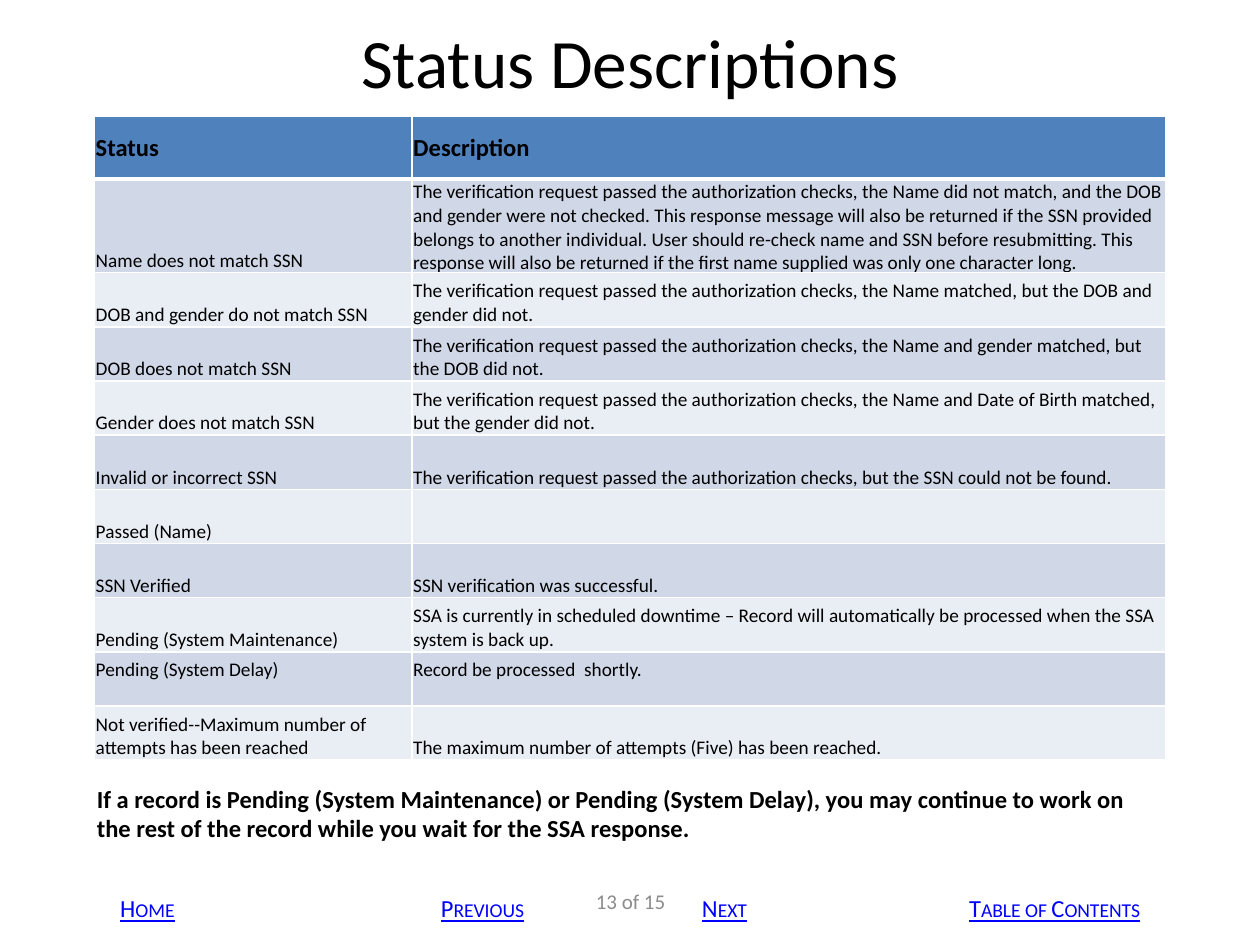
from dataclasses import dataclass

from lxml import etree
from pptx import Presentation
from pptx.dml.color import RGBColor
from pptx.enum import shapes, text
from pptx.oxml.ns import qn
from pptx.util import Inches, Pt


@dataclass(frozen=True)
class Theme:
    """Colours, font and type sizes of the slide."""
    font: str = "Calibri"
    ink: str = "000000"
    paper: str = "FFFFFF"
    header: str = "4F81BD"
    bands: tuple = ("D0D8E8", "E9EDF4")
    link: str = "0000FF"
    muted: str = "8C8C8C"
    title: float = 39.6
    strong: float = 14
    body: float = 11
    number: float = 12


THEME = Theme()
MIDDLE, BOTTOM, TOP = (text.MSO_ANCHOR.MIDDLE, text.MSO_ANCHOR.BOTTOM,
                       text.MSO_ANCHOR.TOP)
CENTER = text.PP_ALIGN.CENTER
PASSED = "The verification request passed the authorization checks, "
DELAY = "Pending (System Delay)"
ROWS = [
    ("Status", "Description"),
    ("Name does not match SSN",
     PASSED + "the Name did not match, and the DOB and gender were not checked. "
     "This response message will also be returned if the SSN provided belongs to "
     "another individual. User should re-check name and SSN before resubmitting. "
     "This response will also be returned if the first name supplied was only one "
     "character long."),
    ("DOB and gender do not match SSN",
     PASSED + "the Name matched, but the DOB and gender did not."),
    ("DOB does not match SSN",
     PASSED + "the Name and gender matched, but the DOB did not."),
    ("Gender does not match SSN",
     PASSED + "the Name and Date of Birth matched, but the gender did not."),
    ("Invalid or incorrect SSN", PASSED + "but the SSN could not be found."),
    ("Passed (Name)", ""),
    ("SSN Verified", "SSN verification was successful."),
    ("Pending (System Maintenance)",
     "SSA is currently in scheduled downtime – Record will automatically be "
     "processed when the SSA system is back up."),
    (DELAY, "Record be processed  shortly."),
    ("Not verified--Maximum number of attempts has been reached",
     "The maximum number of attempts (Five) has been reached."),
]
NOTE = ("If a record is Pending (System Maintenance) or Pending (System Delay), "
        "you may continue to work on the rest of the record while you wait for "
        "the SSA response.")
BUTTONS = [("Home", 0.42, 1.5), ("Previous", 3.08, 1.5), ("Next", 5, 1.5),
           ("Table of Contents", 7.08, 2.58)]


def write(tf, words, size, color=THEME.ink, align=None, **formats):
    """Put one formatted run in a text frame and return it."""
    p = tf.paragraphs[0]
    p.alignment = align
    r = p.add_run()
    r.text = words
    r.font.color.rgb = RGBColor.from_string(color)
    for name, value in {"name": THEME.font, "size": Pt(size), **formats}.items():
        setattr(r.font, name, value)
    return r


def add_label(slide, box, words, size, anchor=TOP, **formats):
    """Add a wrapping text box."""
    tf = slide.shapes.add_textbox(*map(Inches, box)).text_frame
    tf.word_wrap = True
    tf.vertical_anchor = anchor
    write(tf, words, size, **formats)


def add_borders(cell, bottom):
    """Draw the four cell borders, the lower one at its own width."""
    tc_pr = cell._tc.get_or_add_tcPr()
    for side, width in {"L": 1, "R": 1, "T": 1, "B": bottom}.items():
        ln = etree.SubElement(tc_pr, qn(f"a:ln{side}"), w=str(Pt(width)))
        fill = etree.SubElement(ln, qn("a:solidFill"))
        etree.SubElement(fill, qn("a:srgbClr"), val=THEME.paper)


def fill_cell(cell, words, fill, anchor, top, size, bold, bottom):
    """Format one table cell and write its words."""
    add_borders(cell, bottom)
    cell.fill.solid()
    cell.fill.fore_color.rgb = RGBColor.from_string(fill)
    margins = {"margin_left": 0.01, "margin_right": 0.01,
               "margin_top": top, "margin_bottom": 0}
    for name, value in margins.items():
        setattr(cell, name, Inches(value))
    cell.vertical_anchor = anchor
    write(cell.text_frame, words, size, bold=bold)


def add_status_table(slide, box):
    """Add the table of statuses and descriptions."""
    table = slide.shapes.add_table(len(ROWS), 2, *map(Inches, box)).table
    table.horz_banding = False
    for column, width in zip(table.columns, (2.52, 5.98)):
        column.width = Inches(width)
    for i, row in enumerate(ROWS):
        table.rows[i].height = Inches({0: 0.5, 1: 0.73}.get(i, 0.43))
        head, delay = i == 0, row[0] == DELAY
        for j, words in enumerate(row):
            middle = head or (i, j) == (1, 1)
            fill_cell(
                table.cell(i, j), words,
                fill=THEME.header if head else THEME.bands[(i - 1) % 2],
                anchor=MIDDLE if middle else TOP if delay else BOTTOM,
                top=0.05 if delay else 0.01,
                size=THEME.strong if head else THEME.body,
                bold=head, bottom=3 if head else 1)


def add_button(slide, box, words):
    """Add one navigation button with small-caps text."""
    sp = slide.shapes.add_shape(shapes.MSO_SHAPE.ACTION_BUTTON_CUSTOM,
                                *map(Inches, box))
    sp.shadow.inherit = False
    sp.fill.solid()
    sp.fill.fore_color.rgb = RGBColor.from_string(THEME.paper)
    sp.line.fill.background()
    sp.text_frame.vertical_anchor = MIDDLE
    r = write(sp.text_frame, words, THEME.strong, THEME.link, CENTER, underline=True)
    r._r.get_or_add_rPr().set("cap", "small")


def add_navigation(slide, top, height):
    """Add the row of navigation buttons."""
    for words, left, width in BUTTONS:
        add_button(slide, (left, top, width, height), words)


def main():
    """Build and save the slide."""
    prs = Presentation()
    prs.slide_width, prs.slide_height = Inches(10), Inches(7.5)
    slide = prs.slides.add_slide(prs.slide_layouts[6])
    add_label(slide, (0.5, 0.3, 9, 0.37), "Status Descriptions", THEME.title,
              MIDDLE, align=CENTER)
    add_status_table(slide, (0.75, 0.92, 8.5, 5.1))
    add_label(slide, (0.67, 6.17, 8.5, 0.57), NOTE, THEME.strong, bold=True)
    add_navigation(slide, 7.08, 0.25)
    add_label(slide, (3.42, 6.95, 3.17, 0.4), "13 of 15", THEME.number, MIDDLE,
              color=THEME.muted, align=CENTER)
    prs.save("out.pptx")


if __name__ == "__main__":
    main()
